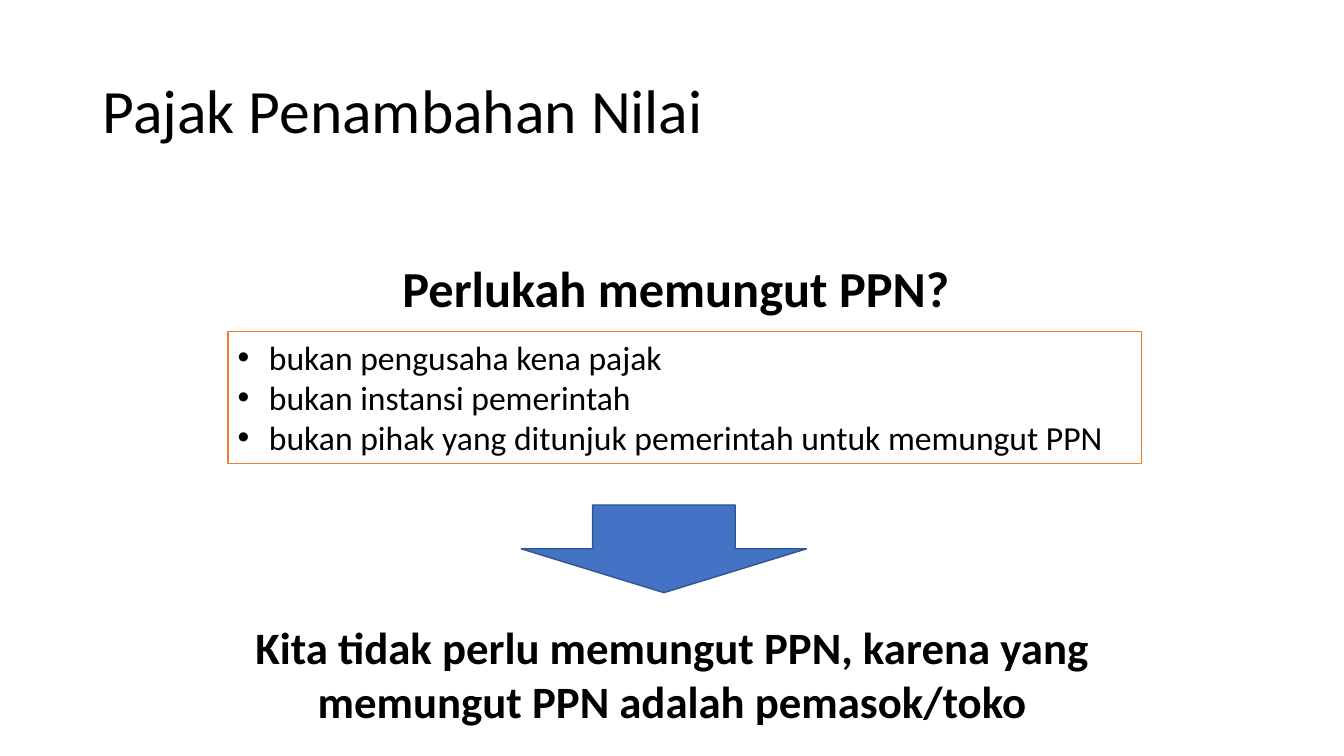
from pptx import Presentation
from pptx.dml.color import RGBColor
from pptx.enum.shapes import MSO_SHAPE
from pptx.enum.text import MSO_ANCHOR, PP_ALIGN
from pptx.oxml import parse_xml
from pptx.oxml.ns import nsdecls
from pptx.util import Inches, Pt

LEFT, CENTER = PP_ALIGN.LEFT, PP_ALIGN.CENTER
TOP, MIDDLE = MSO_ANCHOR.TOP, MSO_ANCHOR.MIDDLE
RECT, ARROW = MSO_SHAPE.RECTANGLE, MSO_SHAPE.DOWN_ARROW

WIDTH, HEIGHT = 13.33, 7.5
FONT, INK = "Calibri", "000000"
INDENT = 0.31

TITLE = "Pajak Penambahan Nilai"
QUESTION = "Perlukah memungut PPN?"
REASONS = [
    "bukan pengusaha kena pajak",
    "bukan instansi pemerintah",
    "bukan pihak yang ditunjuk pemerintah untuk memungut PPN",
]
ANSWER = "Kita tidak perlu memungut PPN, karena yang memungut PPN adalah pemasok/toko"

TEXTS = [
    ((2.02, 2.57, 9.37, 0.79), QUESTION, {"size": Pt(36), "bold": True},
     {"alignment": CENTER, "line_spacing": 0.9, "space_before": Pt(10)}, TOP),
    ((0.92, 0.4, 11.5, 1.45), TITLE, {"size": Pt(44)},
     {"alignment": LEFT, "line_spacing": 0.9}, MIDDLE),
    ((2.26, 6.1, 8.82, 1.18), ANSWER, {"size": Pt(32), "bold": True},
     {"alignment": CENTER}, TOP),
]
REASON_BOX = (2.26, 3.29, 9.06, 1.31)
ARROW_BOX = (5.17, 5.01, 2.83, 0.87)


def color(value):
    """Turn a hex string into a colour."""
    return RGBColor.from_string(value)


def write(sp, lines, font, layout, anchor):
    """Write one paragraph per line and return the paragraphs."""
    tf = sp.text_frame
    tf.word_wrap = True
    tf.vertical_anchor = anchor
    tf.text = "\n".join(lines)
    for p in tf.paragraphs:
        for name, value in layout.items():
            setattr(p, name, value)
        r = p.runs[0]
        for name, value in {"name": FONT, **font}.items():
            setattr(r.font, name, value)
        r.font.color.rgb = color(INK)
    return tf.paragraphs


def add_bullet(p):
    """Give a paragraph a hanging bullet."""
    pPr = p._p.get_or_add_pPr()
    pPr.set("marL", str(Inches(INDENT)))
    pPr.set("indent", str(-Inches(INDENT)))
    for tag in ('a:buFont %s typeface="Arial"', 'a:buChar %s char="•"'):
        pPr.append(parse_xml(f"<{tag % nsdecls('a')}/>"))


def add_panel(s, kind, box, fill, line):
    """Add a filled and outlined shape."""
    sp = s.shapes.add_shape(kind, *map(Inches, box))
    sp.shadow.inherit = False
    sp.fill.solid()
    sp.fill.fore_color.rgb = color(fill)
    sp.line.color.rgb = color(line)
    sp.line.width = Pt(1)
    return sp


def main():
    """Build and save the slide."""
    prs = Presentation()
    prs.slide_width, prs.slide_height = Inches(WIDTH), Inches(HEIGHT)
    s = prs.slides.add_slide(prs.slide_layouts[6])
    for box, text, font, layout, anchor in TEXTS:
        write(s.shapes.add_textbox(*map(Inches, box)), [text], font, layout, anchor)
    reasons = add_panel(s, RECT, REASON_BOX, "FFFFFF", "ED7D31")
    for p in write(reasons, REASONS, {"size": Pt(24)}, {"alignment": LEFT}, TOP):
        add_bullet(p)
    add_panel(s, ARROW, ARROW_BOX, "4472C4", "325491")
    prs.save("out.pptx")


if __name__ == "__main__":
    main()
